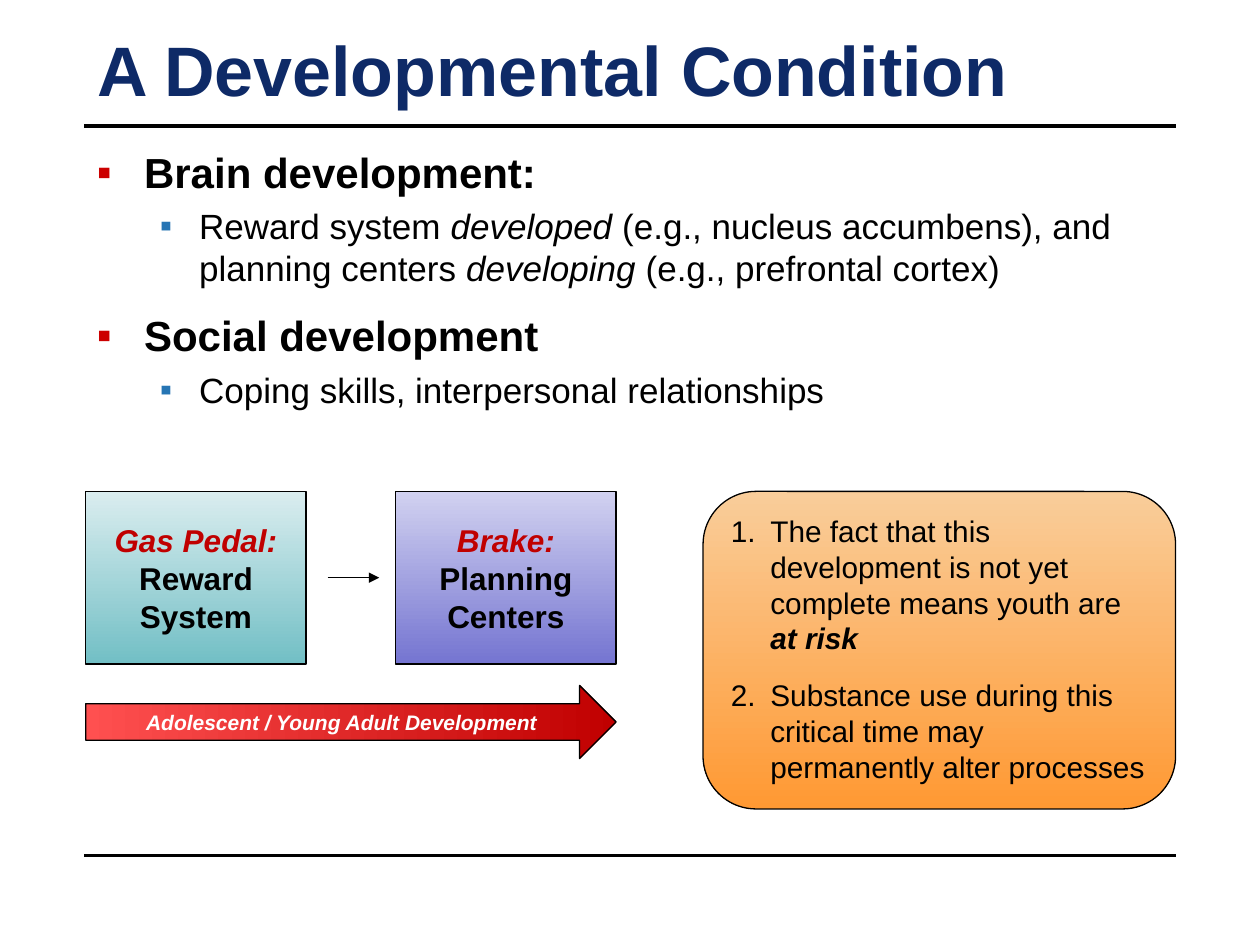
"""Builds the slide "A Developmental Condition"."""
from lxml import etree
from pptx import Presentation
from pptx.dml.color import RGBColor
from pptx.enum import shapes, text
from pptx.oxml import ns
from pptx.util import Pt

BLACK, WHITE = RGBColor(0, 0, 0), RGBColor(255, 255, 255)
NAVY, RED = RGBColor(0x0E, 0x2A, 0x67), RGBColor(0xC0, 0, 0)
BULLET_RED, BULLET_BLUE = RGBColor(0xCC, 0, 0), RGBColor(0x26, 0x75, 0xB4)
TEAL = RGBColor(0xDA, 0xED, 0xEF), RGBColor(0x72, 0xBF, 0xC5)
VIOLET = RGBColor(0xD1, 0xD1, 0xF0), RGBColor(0x75, 0x75, 0xD1)
ORANGE = RGBColor(0xF9, 0xCD, 0x9A), RGBColor(0xFF, 0x99, 0x33)
CRIMSON = RGBColor(0xFF, 0x50, 0x50), RED

TITLE = "A Developmental Condition"
TOPICS = [
    ("Brain development:",
     [("Reward system ", ""), ("developed ", "i"),
      ("(e.g., nucleus accumbens), and planning centers ", ""),
      ("developing ", "i"), ("(e.g., prefrontal cortex)", "")]),
    ("Social development", [("Coping skills, interpersonal relationships", "")]),
]
SYSTEMS = [("Gas Pedal:", "Reward System", TEAL),
           ("Brake:", "Planning Centers", VIOLET)]
TIMELINE = "Adolescent / Young Adult Development"
RISKS = [
    [("The fact that this development is not yet complete means youth are ", ""),
     ("at risk", "bi")],
    [("Substance use during this critical time may permanently alter processes", "")],
]

LEFT, RIGHT = 48.24, 671.76
RULES = 72, 488.88
ROW_TOP, BOX_W, BOX_H, BOX_STEP = 280.8, 126, 98.64, 177.12
BOX_LEFT = 48.96


def write(tf, runs, size=18, color=BLACK, align=text.PP_ALIGN.LEFT, before=0,
          indent=0, hang=0, bullet=None, bullet_color=None):
    """Add one paragraph of (text, style) runs; style letters are b and i."""
    p = tf.paragraphs[0]
    first = not p.runs
    if not first:
        p = tf.add_paragraph()
    p.alignment = align
    p.space_before = Pt(0 if first else before)
    if bullet:
        pPr = p._p.get_or_add_pPr()
        pPr.set("marL", str(Pt(indent)))
        pPr.set("indent", str(-Pt(hang)))
        if bullet_color:
            clr = etree.SubElement(pPr, ns.qn("a:buClr"))
            etree.SubElement(clr, ns.qn("a:srgbClr"), val=str(bullet_color))
        etree.SubElement(pPr, ns.qn("a:buFont"), typeface="Arial")
        if bullet == "1.":
            etree.SubElement(pPr, ns.qn("a:buAutoNum"), type="arabicPeriod")
        else:
            etree.SubElement(pPr, ns.qn("a:buChar"), char=bullet)
    for words, style in runs:
        r = p.add_run()
        r.text = words
        r.font.name, r.font.size = "Arial", Pt(size)
        r.font.bold, r.font.italic = "b" in style, "i" in style
        r.font.color.rgb = color


def add_block(s, kind, x, y, w, h, colors, angle=270, anchor=text.MSO_ANCHOR.MIDDLE):
    """Add an outlined gradient shape and return its text frame."""
    sp = s.shapes.add_shape(kind, Pt(x), Pt(y), Pt(w), Pt(h))
    sp.shadow.inherit = False
    sp.fill.gradient()
    sp.fill.gradient_angle = angle
    for stop, color in zip(sp.fill.gradient_stops, colors):
        stop.color.rgb = color
    sp.line.color.rgb, sp.line.width = BLACK, Pt(0.75)
    sp.text_frame.word_wrap = True
    sp.text_frame.vertical_anchor = anchor
    return sp.text_frame


def add_line(s, x1, x2, y, width, arrow=False):
    """Add a horizontal black line, with an arrowhead if asked."""
    line = s.shapes.add_connector(shapes.MSO_CONNECTOR.STRAIGHT,
                                  Pt(x1), Pt(y), Pt(x2), Pt(y))
    line.line.color.rgb, line.line.width = BLACK, Pt(width)
    if arrow:
        etree.SubElement(line.line._get_or_add_ln(), ns.qn("a:tailEnd"), type="triangle")
    etree.SubElement(line._element.spPr, ns.qn("a:effectLst"))


def main():
    """Build and save the slide."""
    prs = Presentation()
    prs.slide_width, prs.slide_height = Pt(720), Pt(540)
    s = prs.slides.add_slide(prs.slide_layouts[5])
    for y in RULES:
        add_line(s, LEFT, RIGHT, y, 2.25)

    title = s.shapes.title
    title.left, title.top = Pt(LEFT), Pt(12.24)
    title.width, title.height = Pt(RIGHT - LEFT), Pt(54)
    title.text_frame.vertical_anchor = text.MSO_ANCHOR.MIDDLE
    write(title.text_frame, [(TITLE, "b")], size=40, color=NAVY)

    body = s.shapes.add_textbox(Pt(LEFT), Pt(77.76), Pt(RIGHT - LEFT), Pt(378)).text_frame
    body.word_wrap = True
    body.margin_top = Pt(6)
    for heading, detail in TOPICS:
        write(body, [(heading, "b")], size=24, before=12, indent=27, hang=27,
              bullet="▪", bullet_color=BULLET_RED)
        write(body, detail, size=20, before=4.5, indent=58.5, hang=22.5,
              bullet="▪", bullet_color=BULLET_BLUE)

    tf = add_block(s, shapes.MSO_SHAPE.ROUNDED_RECTANGLE, 401.76, ROW_TOP, 270, 181.44,
                   ORANGE, anchor=text.MSO_ANCHOR.TOP)
    for risk in RISKS:
        write(tf, risk, size=17, before=12, indent=22.5, hang=22.5, bullet="1.")

    center = text.PP_ALIGN.CENTER
    for i, (role, system, colors) in enumerate(SYSTEMS):
        tf = add_block(s, shapes.MSO_SHAPE.RECTANGLE, BOX_LEFT + i * BOX_STEP, ROW_TOP,
                       BOX_W, BOX_H, colors)
        write(tf, [(role, "bi")], color=RED, align=center)
        write(tf, [(system, "b")], align=center)

    tf = add_block(s, shapes.MSO_SHAPE.RIGHT_ARROW, BOX_LEFT, 391.68, BOX_STEP + BOX_W,
                   41.76, CRIMSON, angle=0)
    write(tf, [(TIMELINE, "bi")], size=12, color=WHITE, align=center)
    add_line(s, 187.2, 216.72, ROW_TOP + BOX_H / 2, 0.75, arrow=True)

    prs.save("out.pptx")


if __name__ == "__main__":
    main()
